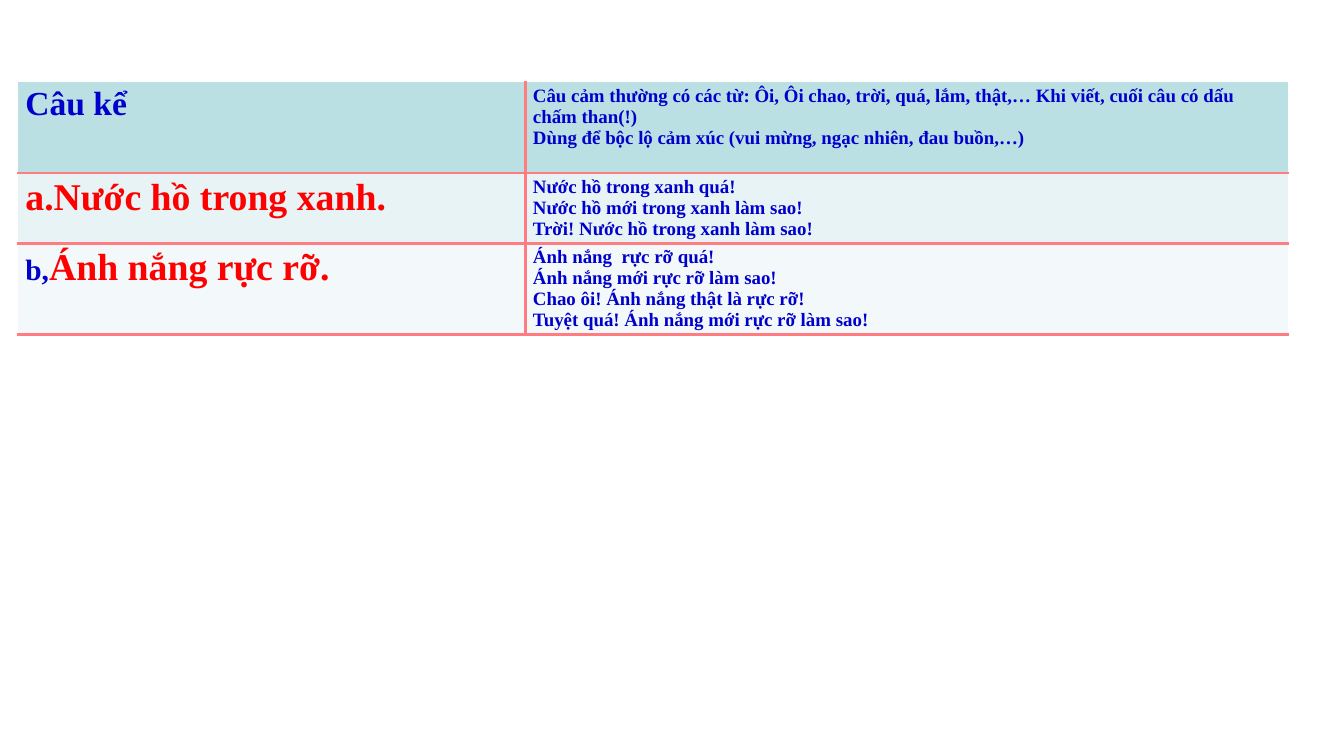
from lxml import etree
from pptx import Presentation
from pptx import util as u
from pptx.dml.color import RGBColor
from pptx.enum import text
from pptx.oxml.ns import qn

BLUE, RED, WHITE, PINK = "0000CC", "FF0000", "FFFFFF", "FF7C80"
FONT = {"name": "Times New Roman", "bold": True}
COLS = (484, 728)
ROWS = (87, 67, 87)
FILLS = ("BBE0E3", "E7F3F4", "F3F9FA")

# Each prompt: runs of (text, size, colour), then whether it is lettered and justified
PROMPTS = (
    ([("Câu kể", 32, BLUE)], False, False),
    ([("Nước hồ trong xanh.", 36, RED)], True, True),
    ([("b,", 28, BLUE), ("Ánh nắng rực rỡ.", 36, RED)], False, True),
)
ANSWERS = (
    ("Câu cảm thường có các từ: Ôi, Ôi chao, trời, quá, lắm, thật,… "
     "Khi viết, cuối câu có dấu chấm than(!)",
     "Dùng để bộc lộ cảm xúc (vui mừng, ngạc nhiên, đau buồn,…)"),
    ("Nước hồ trong xanh quá!",
     "Nước hồ mới trong xanh làm sao!",
     "Trời! Nước hồ trong xanh làm sao!"),
    ("Ánh nắng  rực rỡ quá!",
     "Ánh nắng mới rực rỡ làm sao!",
     "Chao ôi! Ánh nắng thật là rực rỡ!",
     "Tuyệt quá! Ánh nắng mới rực rỡ làm sao!"),
)


def color(value):
    return RGBColor.from_string(value)


def add_run(p, words, size, fill):
    r = p.add_run()
    r.text = words
    for name, value in {**FONT, "size": u.Pt(size)}.items():
        setattr(r.font, name, value)
    r.font.color.rgb = color(fill)


def add_letter(p):
    """Number the paragraph a., b., ... with a hanging indent."""
    pPr = p._p.get_or_add_pPr()
    pPr.set("marL", str(u.Pt(27)))
    pPr.set("indent", str(-u.Pt(27)))
    etree.SubElement(pPr, qn("a:buFont"), typeface="+mj-lt")
    etree.SubElement(pPr, qn("a:buAutoNum"), type="alphaLcPeriod")


def set_borders(cell, row, col):
    tcPr = cell._tc.get_or_add_tcPr()
    inner = {"L": col > 0, "R": col == 0, "T": row > 0, "B": True}
    for side, pink in inner.items():
        ln = etree.SubElement(tcPr, qn(f"a:ln{side}"), w=str(u.Pt(3 if pink else 1)))
        fill = etree.SubElement(ln, qn("a:solidFill"))
        etree.SubElement(fill, qn("a:srgbClr"), val=PINK if pink else WHITE)


def fill_prompt(cell, runs, lettered, justified):
    p = cell.text_frame.paragraphs[0]
    if lettered:
        add_letter(p)
    if justified:
        p.alignment = text.PP_ALIGN.JUSTIFY
    for run in runs:
        add_run(p, *run)


def fill_answers(cell, lines):
    tf = cell.text_frame
    for i, line in enumerate(lines):
        p = tf.add_paragraph() if i else tf.paragraphs[0]
        add_run(p, line, 18, BLUE)


def add_sentence_table(s):
    table = s.shapes.add_table(len(ROWS), len(COLS), u.Pt(17), u.Pt(78),
                               u.Pt(sum(COLS)), u.Pt(sum(ROWS))).table
    for column, width in zip(table.columns, COLS):
        column.width = u.Pt(width)
    for i, height in enumerate(ROWS):
        table.rows[i].height = u.Pt(height)
        for j in range(len(COLS)):
            cell = table.cell(i, j)
            set_borders(cell, i, j)
            cell.fill.solid()
            cell.fill.fore_color.rgb = color(FILLS[i])
        fill_prompt(table.cell(i, 0), *PROMPTS[i])
        fill_answers(table.cell(i, 1), ANSWERS[i])


def main():
    prs = Presentation()
    prs.slide_width, prs.slide_height = u.Pt(1281.6), u.Pt(720)
    s = prs.slides.add_slide(prs.slide_layouts[6])
    # Statements on the left, exclamations on the right
    add_sentence_table(s)
    prs.save("out.pptx")


if __name__ == "__main__":
    main()
